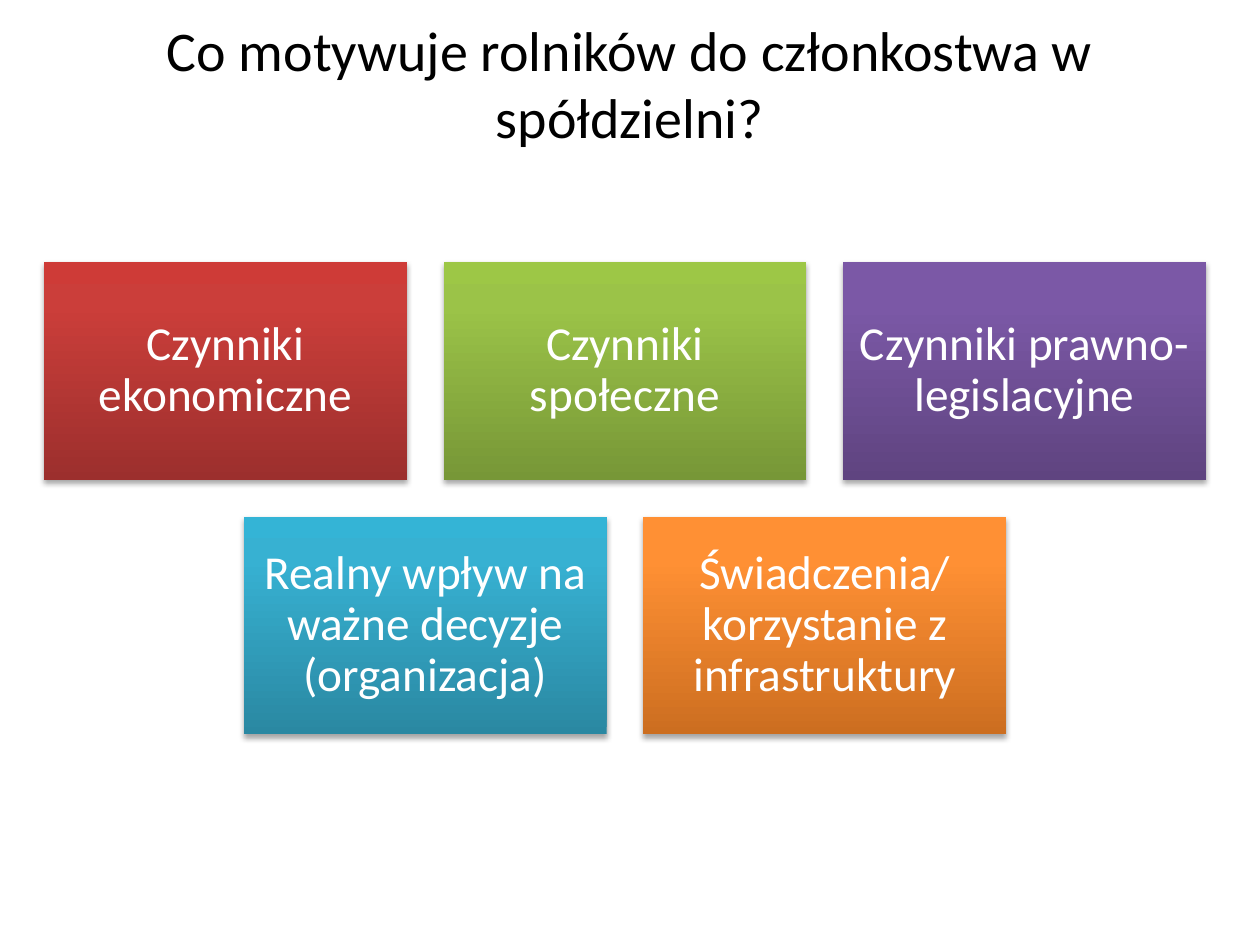
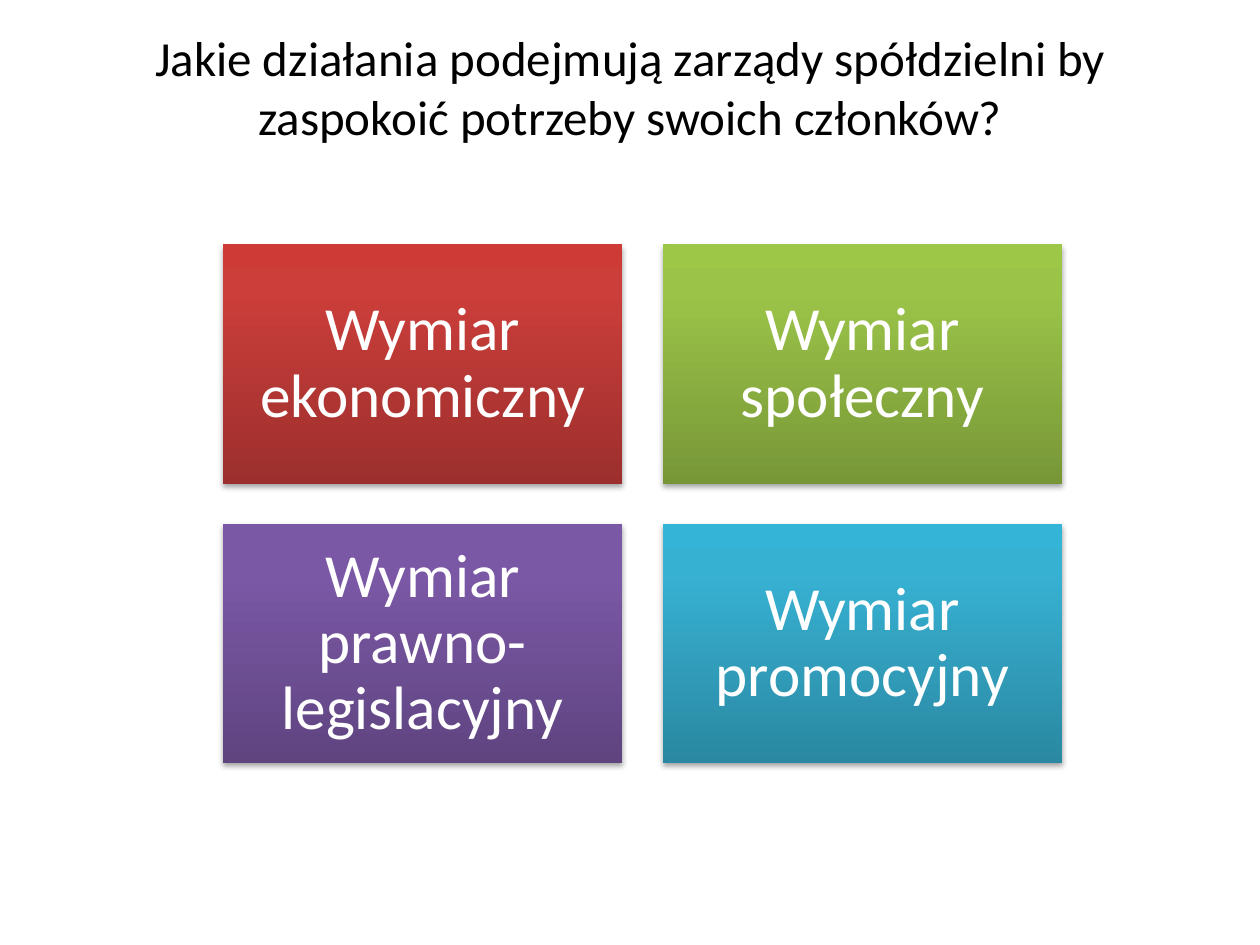
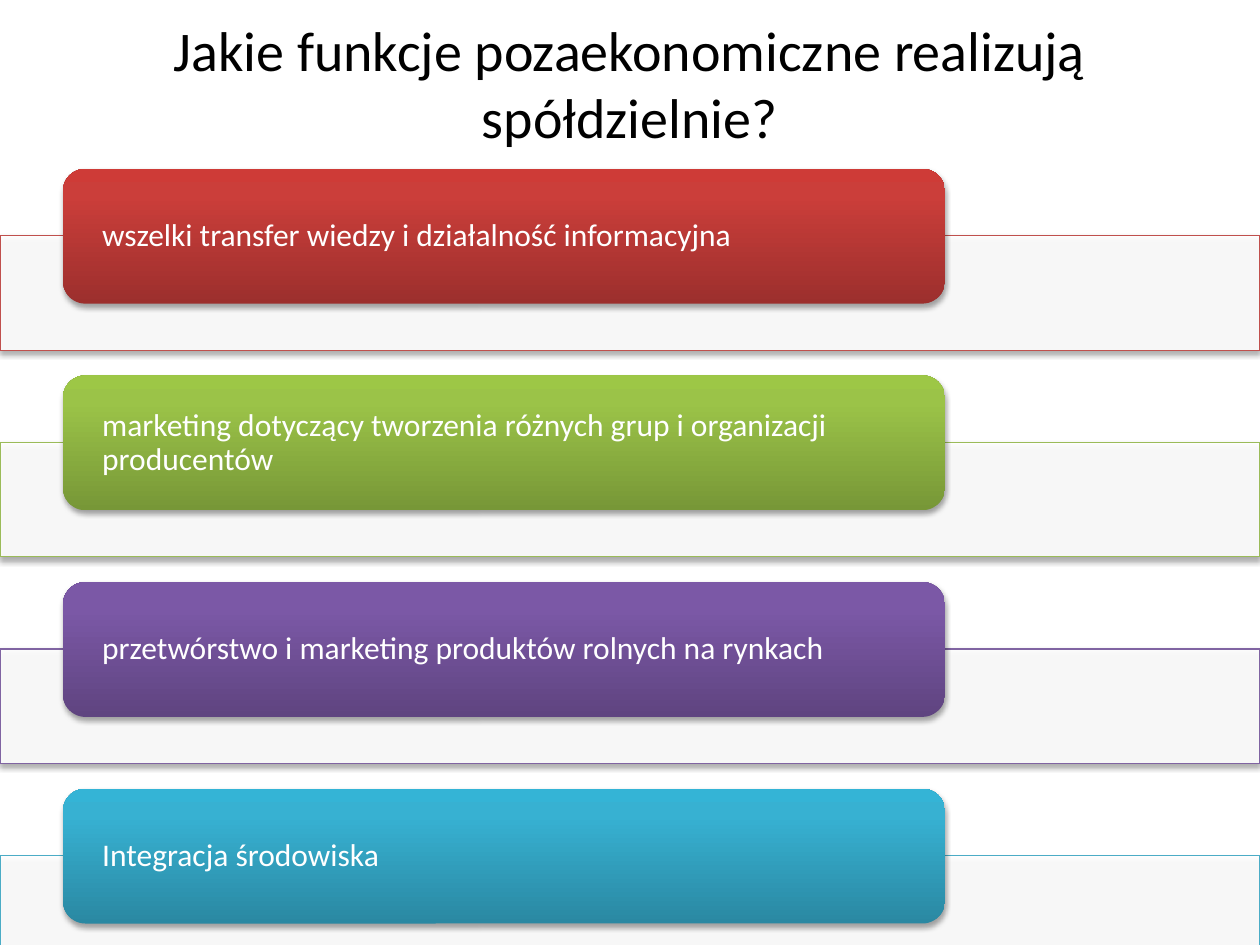
"""Build three slides on what motivates farmers to join cooperatives."""
from dataclasses import dataclass

from lxml import etree
from pptx import Presentation
from pptx.dml.color import RGBColor
from pptx.enum.shapes import MSO_SHAPE
from pptx.enum.text import MSO_ANCHOR, PP_ALIGN
from pptx.oxml.ns import qn
from pptx.shapes.autoshape import Shape
from pptx.slide import Slide
from pptx.text.text import TextFrame
from pptx.util import Inches, Pt

RECTANGLE, ROUNDED = MSO_SHAPE.RECTANGLE, MSO_SHAPE.ROUNDED_RECTANGLE
MIDDLE = MSO_ANCHOR.MIDDLE
LEFT, CENTER = PP_ALIGN.LEFT, PP_ALIGN.CENTER

FONT = "Calibri"
LINE_HEIGHT = 1.22
BLACK = RGBColor(0x00, 0x00, 0x00)
WHITE = RGBColor(0xFF, 0xFF, 0xFF)


@dataclass(frozen=True)
class Accent:
    line: RGBColor
    dark: RGBColor
    middle: RGBColor
    light: RGBColor


RED = Accent(RGBColor(0xC0, 0x50, 0x4D), RGBColor(0x9C, 0x2F, 0x2D),
             RGBColor(0xCB, 0x3E, 0x3A), RGBColor(0xCE, 0x3B, 0x37))
GREEN = Accent(RGBColor(0x9B, 0xBB, 0x59), RGBColor(0x77, 0x97, 0x37),
               RGBColor(0x9B, 0xC3, 0x48), RGBColor(0x9D, 0xC7, 0x46))
PURPLE = Accent(RGBColor(0x80, 0x64, 0xA2), RGBColor(0x5F, 0x44, 0x80),
                RGBColor(0x7B, 0x58, 0xA6), RGBColor(0x7C, 0x57, 0xA8))
BLUE = Accent(RGBColor(0x4B, 0xAC, 0xC6), RGBColor(0x2A, 0x88, 0xA2),
              RGBColor(0x37, 0xB1, 0xD2), RGBColor(0x34, 0xB4, 0xD6))
ORANGE = Accent(RGBColor(0xF7, 0x96, 0x46), RGBColor(0xCC, 0x6E, 0x20),
                RGBColor(0xFF, 0x90, 0x34), RGBColor(0xFF, 0x91, 0x36))
ACCENTS = (RED, GREEN, PURPLE, BLUE, ORANGE)


@dataclass(frozen=True)
class TileGrid:
    center: float
    top: float
    width: float
    height: float
    gap: float
    inset: float
    size: int
    rows: tuple[tuple[str, ...], ...]


MOTIVES = TileGrid(4.96, 2.08, 2.88, 1.73, 0.29, 0.11, 27, (
    ("Czynniki ekonomiczne", "Czynniki społeczne", "Czynniki prawno-legislacyjne"),
    ("Realny wpływ na ważne decyzje (organizacja)",
     "Świadczenia/ korzystanie z infrastruktury"),
))
DIMENSIONS = TileGrid(5.1, 1.94, 3.17, 1.9, 0.32, 0.15, 35, (
    ("Wymiar ekonomiczny", "Wymiar społeczny"),
    ("Wymiar prawno-legislacyjny", "Wymiar promocyjny"),
))
FUNCTIONS = (
    "wszelki transfer wiedzy i działalność informacyjna",
    "marketing dotyczący tworzenia różnych grup i organizacji producentów",
    "przetwórstwo i marketing produktów rolnych na rynkach",
    "Integracja środowiska",
)
FUNCTIONS_TOP, FUNCTIONS_PITCH, BAR_OFFSET = 1.34, 1.64, 0.53


def write(frame: TextFrame, text: str, size: int, color: RGBColor,
          alignment: PP_ALIGN, spacing: float = 1.0) -> None:
    """Put one wrapped, vertically centred paragraph in a frame."""
    frame.word_wrap = True
    frame.vertical_anchor = MIDDLE
    para = frame.paragraphs[0]
    para.text = text
    para.alignment = alignment
    para.line_spacing = spacing
    para.font.name = FONT
    para.font.size = Pt(size)
    para.font.color.rgb = color


def set_insets(frame: TextFrame, horizontal: float, vertical: float) -> None:
    """Set the side and the top and bottom margins of a frame."""
    frame.margin_left = frame.margin_right = Inches(horizontal)
    frame.margin_top = frame.margin_bottom = Inches(vertical)


def add_color(parent: etree.Element, color: RGBColor, alpha: int) -> None:
    """Append a colour with an opacity in percent."""
    node = etree.SubElement(parent, qn("a:srgbClr"), val=str(color))
    etree.SubElement(node, qn("a:alpha"), val=str(alpha * 1000))


def add_shadow(shape: Shape) -> None:
    """Give a shape a soft shadow falling downwards."""
    shape.shadow.inherit = False
    effects = shape.element.spPr.find(qn("a:effectLst"))
    shadow = etree.SubElement(
        effects, qn("a:outerShdw"), blurRad=str(Pt(3.1)), dist=str(Pt(1.8)),
        dir="5400000", rotWithShape="0")
    add_color(shadow, BLACK, 35)


def fill_gradient(shape: Shape, accent: Accent) -> None:
    """Fill a shape from dark at the bottom to light at the top."""
    shape.fill.gradient()
    shape.fill.gradient_angle = 90
    stops = shape.element.spPr.find(f".//{qn('a:gsLst')}")
    for stop in list(stops):
        stops.remove(stop)
    for position, color in ((0, accent.dark), (80, accent.middle), (100, accent.light)):
        stop = etree.SubElement(stops, qn("a:gs"), pos=str(position * 1000))
        add_color(stop, color, 100)
    shape.line.fill.background()


def add_block(page: Slide, kind: MSO_SHAPE, left: float, top: float,
              width: float, height: float) -> Shape:
    """Add a shape with the shared shadow."""
    shape = page.shapes.add_shape(
        kind, Inches(left), Inches(top), Inches(width), Inches(height))
    add_shadow(shape)
    return shape


def add_title(page: Slide, text: str, size: int) -> None:
    """Add the slide title, raised by half a line."""
    box = page.shapes.add_textbox(Inches(0.5), Inches(0.3), Inches(9), Inches(1.25))
    write(box.text_frame, text, size, BLACK, CENTER)
    box.text_frame.margin_bottom = Inches(0.05) + Pt(size * LINE_HEIGHT)


def add_tiles(page: Slide, grid: TileGrid) -> None:
    """Draw rows of tiles, each row centred on the grid."""
    accents = iter(ACCENTS)
    pitch = grid.width + grid.gap
    for row, labels in enumerate(grid.rows):
        left = grid.center - (len(labels) * pitch - grid.gap) / 2
        top = grid.top + row * (grid.height + grid.gap)
        for column, label in enumerate(labels):
            tile = add_block(page, RECTANGLE, left + column * pitch, top,
                             grid.width, grid.height)
            fill_gradient(tile, next(accents))
            set_insets(tile.text_frame, grid.inset, grid.inset)
            write(tile.text_frame, label, grid.size, WHITE, CENTER, 0.9)


def add_function(page: Slide, top: float, label: str, accent: Accent) -> None:
    """Draw a full-width bar with a labelled pill over it."""
    bar = add_block(page, RECTANGLE, 0, top + BAR_OFFSET, 10, 0.91)
    bar.fill.solid()
    bar.fill.fore_color.rgb = WHITE
    color = bar.element.spPr.find(f"{qn('a:solidFill')}/{qn('a:srgbClr')}")
    etree.SubElement(color, qn("a:alpha"), val="90000")
    bar.line.color.rgb = accent.line
    bar.line.width = Pt(0.75)

    pill = add_block(page, ROUNDED, 0.5, top, 7, 1.07)
    fill_gradient(pill, accent)
    set_insets(pill.text_frame, 0.26, 0)
    write(pill.text_frame, label, 18, WHITE, LEFT, 0.9)


def main() -> None:
    """Build and save the deck."""
    deck = Presentation()
    deck.slide_width, deck.slide_height = Inches(10), Inches(7.5)
    blank = deck.slide_layouts[6]

    page = deck.slides.add_slide(blank)
    add_title(page, "Co motywuje rolników do członkostwa w spółdzielni?", 32)
    add_tiles(page, MOTIVES)

    page = deck.slides.add_slide(blank)
    add_title(page, "Jakie działania podejmują zarządy spółdzielni by "
                    "zaspokoić potrzeby swoich członków?", 28)
    add_tiles(page, DIMENSIONS)

    page = deck.slides.add_slide(blank)
    add_title(page, "Jakie funkcje pozaekonomiczne realizują spółdzielnie?", 32)
    for index, (label, accent) in enumerate(zip(FUNCTIONS, ACCENTS)):
        add_function(page, FUNCTIONS_TOP + index * FUNCTIONS_PITCH, label, accent)

    deck.save("out.pptx")


if __name__ == "__main__":
    main()
